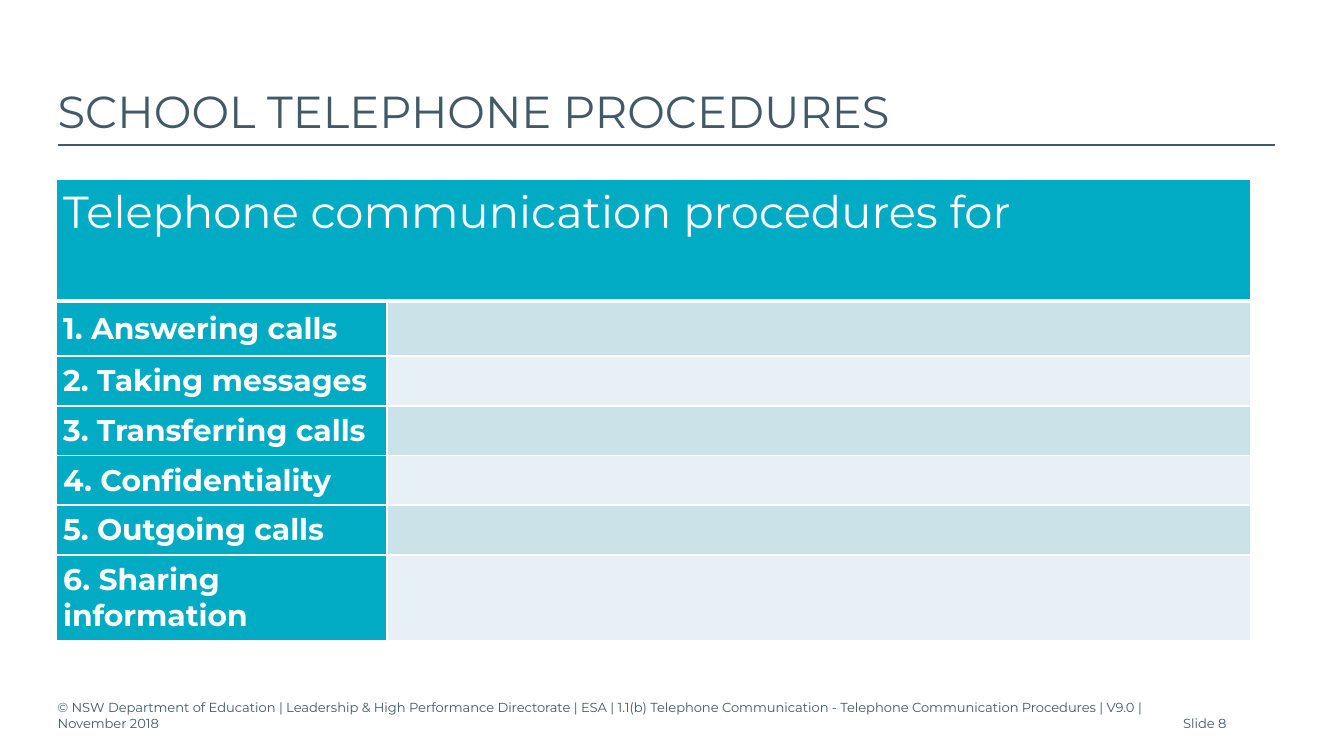
from lxml.etree import SubElement
from pptx import Presentation
from pptx.dml.color import RGBColor
from pptx.enum.shapes import MSO_CONNECTOR
from pptx.enum.text import MSO_ANCHOR, PP_ALIGN
from pptx.oxml.ns import qn
from pptx.util import Inches, Pt

FONT = "Montserrat"
COLORS = {
    "slate": "425968",
    "teal": "00ABC3",
    "band_dark": "CCE2E9",
    "band_light": "E7F1F5",
    "white": "FFFFFF",
}
PROCEDURES = [
    "Answering calls",
    "Taking messages",
    "Transferring calls",
    "Confidentiality",
    "Outgoing calls",
    "Sharing information",
]
COLUMN_WIDTHS = [2.46, 6.43]
ROW_HEIGHTS = [0.91, 0.41, 0.37, 0.37, 0.37, 0.37, 0.64]


def color(name):
    return RGBColor.from_string(COLORS[name])


def style(paragraph, size, color_name, bold=False):
    font = paragraph.font
    font.name, font.size, font.bold = FONT, Pt(size), bold
    font.color.rgb = color(color_name)


def add_text(slide, text, left, top, width, height, size,
             inset=0, align=PP_ALIGN.LEFT):
    frame = slide.shapes.add_textbox(
        Inches(left), Inches(top), Inches(width), Inches(height)).text_frame
    frame.word_wrap = True
    frame.vertical_anchor = MSO_ANCHOR.BOTTOM
    frame.margin_left = Inches(inset)
    paragraph = frame.paragraphs[0]
    paragraph.text = text
    paragraph.alignment = align
    style(paragraph, size, "slate")


def add_rule(slide, left, right, y):
    rule = slide.shapes.add_connector(
        MSO_CONNECTOR.STRAIGHT,
        Inches(left), Inches(y), Inches(right), Inches(y))
    rule.line.color.rgb = color("slate")
    rule.line.width = Pt(1)
    SubElement(rule._element.spPr, qn("a:effectLst"))


def set_borders(cell, top=1, bottom=1):
    properties = cell._tc.get_or_add_tcPr()
    for side, points in (("L", 1), ("R", 1), ("T", top), ("B", bottom)):
        border = SubElement(properties, qn(f"a:ln{side}"), w=str(Pt(points)))
        fill = SubElement(border, qn("a:solidFill"))
        SubElement(fill, qn("a:srgbClr"), val=COLORS["white"])


def fill_cell(cell, fill, text="", size=16, bold=True, **borders):
    set_borders(cell, **borders)
    cell.fill.solid()
    cell.fill.fore_color.rgb = color(fill)
    cell.margin_left = cell.margin_right = Inches(0.05)
    cell.margin_top = cell.margin_bottom = Inches(0.05 if text else 0)
    cell.vertical_anchor = MSO_ANCHOR.MIDDLE
    paragraph = cell.text_frame.paragraphs[0]
    paragraph.text = text
    style(paragraph, size, "white", bold)


def add_procedures_table(slide):
    table = slide.shapes.add_table(
        len(ROW_HEIGHTS), len(COLUMN_WIDTHS), Inches(0.42), Inches(1.33),
        Inches(sum(COLUMN_WIDTHS)), Inches(sum(ROW_HEIGHTS))).table
    for column, width in zip(table.columns, COLUMN_WIDTHS):
        column.width = Inches(width)
    for row, height in zip(table.rows, ROW_HEIGHTS):
        row.height = Inches(height)

    # Header across both columns, with a line left free for the school's name
    header = table.cell(0, 0)
    header.merge(table.cell(0, 1))
    fill_cell(header, "teal", "Telephone communication procedures for\v",
              size=24, bold=False, bottom=3)
    set_borders(table.cell(0, 1), bottom=3)

    # Numbered procedures with banded answer cells
    for number, procedure in enumerate(PROCEDURES, start=1):
        top = 3 if number == 1 else 1
        band = "band_dark" if number % 2 else "band_light"
        fill_cell(table.cell(number, 0), "teal", f"{number}. {procedure}",
                  top=top)
        fill_cell(table.cell(number, 1), band, top=top)


def main():
    # Widescreen slide, 16:9
    deck = Presentation()
    deck.slide_width = Inches(10)
    deck.slide_height = deck.slide_width * 9 // 16
    slide = deck.slides.add_slide(deck.slide_layouts[6])

    # Title and rule
    add_rule(slide, 0.43, 9.49, 1.08)
    add_text(slide, "SCHOOL TELEPHONE PROCEDURES",
             0.43, 0.29, 9.06, 0.78, size=24)

    add_procedures_table(slide)

    # Footer
    add_text(slide,
             "© NSW Department of Education | Leadership & High Performance "
             "Directorate | ESA | 1.1(b) Telephone Communication - Telephone "
             "Communication Procedures | V9.0 | November 2018",
             0.43, 5.19, 8.27, 0.3, size=7)
    add_text(slide, "Slide 8", 8.61, 5.19, 0.71, 0.3, size=7,
             inset=0.1, align=PP_ALIGN.CENTER)

    deck.save("out.pptx")


if __name__ == "__main__":
    main()
